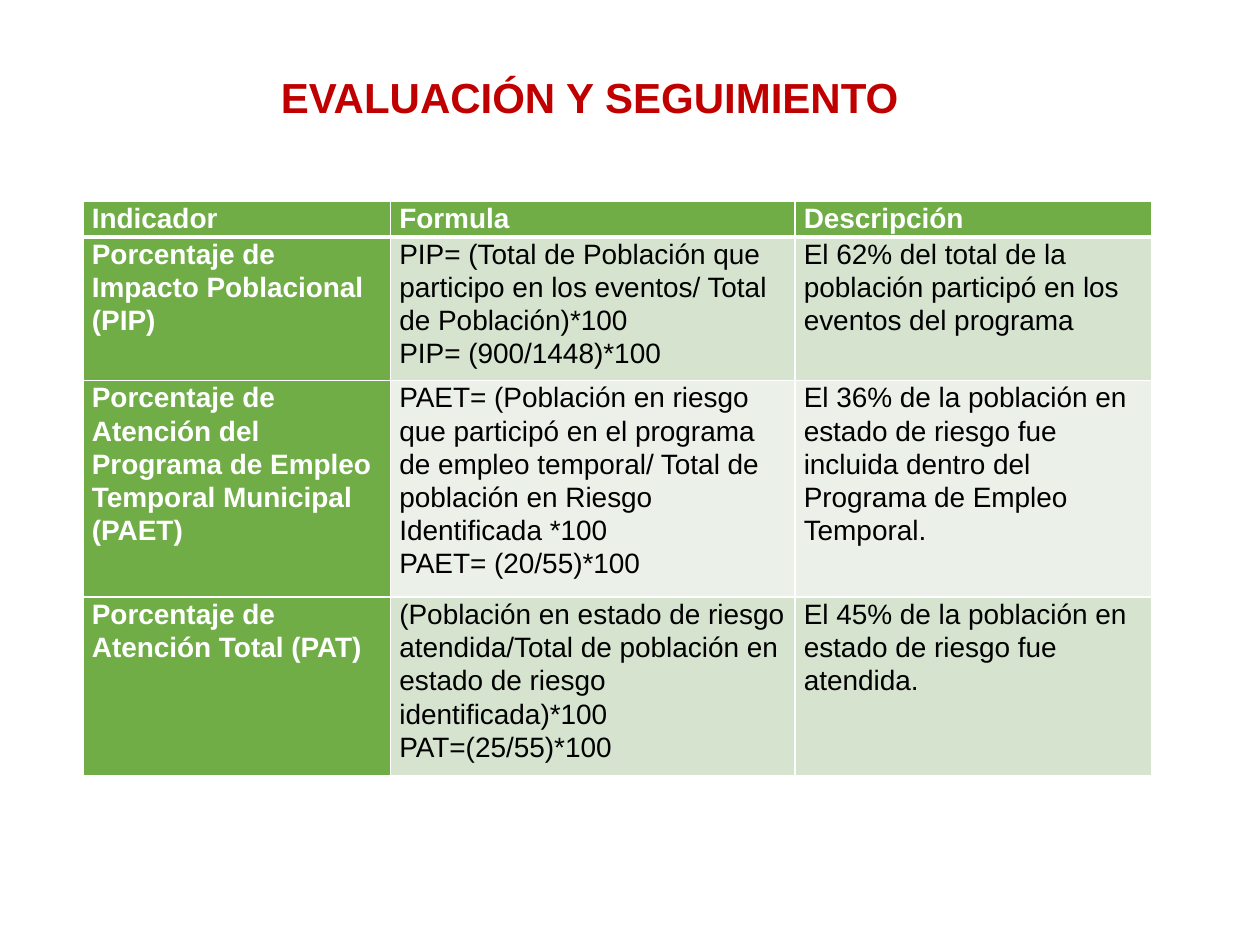
from lxml import etree
from pptx import Presentation
from pptx.dml.color import RGBColor
from pptx.enum import text
from pptx.oxml import ns
from pptx.util import Inches, Pt

COLORS = {"title": "C00000", "green": "70AD47", "band_dark": "D5E3CF",
          "band_light": "EBF1E9", "white": "FFFFFF", "black": "000000"}
ROWS = [
    ("Indicador", "Formula", "Descripción"),
    ("Porcentaje de Impacto Poblacional (PIP)",
     "PIP= (Total de Población que participo en los eventos/ Total de Población)*100\n"
     "PIP= (900/1448)*100",
     "El 62% del total de la población participó en los eventos del programa"),
    ("Porcentaje de Atención del Programa de Empleo Temporal Municipal (PAET)",
     "PAET= (Población en riesgo que participó en el programa de empleo temporal/ "
     "Total de población en Riesgo Identificada *100\nPAET= (20/55)*100",
     "El 36% de la población en estado de riesgo fue incluida dentro del "
     "Programa de Empleo Temporal."),
    ("Porcentaje de Atención Total (PAT)",
     "(Población en estado de riesgo atendida/Total de población en estado de "
     "riesgo identificada)*100\nPAT=(25/55)*100",
     "El 45% de la población en estado de riesgo fue atendida."),
]
COL_WIDTHS = [2.44, 3.21, 2.83]
ROW_HEIGHTS = [0.28, 1.14, 1.72, 1.42]


def style_font(p, size, color, bold):
    for r in p.runs:
        r.font.name = "Arial"
        r.font.size = Pt(size)
        r.font.bold = bold
        r.font.color.rgb = RGBColor.from_string(COLORS[color])


def set_borders(cell, widths):
    """Draw white cell borders; widths maps an edge letter to points."""
    tc_pr = cell._tc.get_or_add_tcPr()
    for i, (edge, width) in enumerate(widths.items()):
        ln = etree.Element(ns.qn(f"a:ln{edge}"), w=str(Pt(width)))
        fill = etree.SubElement(ln, ns.qn("a:solidFill"))
        etree.SubElement(fill, ns.qn("a:srgbClr"), val=COLORS["white"])
        tc_pr.insert(i, ln)


prs = Presentation()
prs.slide_width, prs.slide_height = Inches(10), Inches(7.5)
s = prs.slides.add_slide(prs.slide_layouts[5])

title = s.shapes.title
title.left, title.top = Inches(1.38), Inches(0.52)
title.width, title.height = Inches(6.6), Inches(0.81)
tf = title.text_frame
tf.text = "EVALUACIÓN Y SEGUIMIENTO"
tf.word_wrap = True
tf.auto_size = text.MSO_AUTO_SIZE.NONE
tf.vertical_anchor = text.MSO_ANCHOR.TOP
tf.paragraphs[0].alignment = text.PP_ALIGN.CENTER
style_font(tf.paragraphs[0], 24, "title", True)

table = s.shapes.add_table(len(ROWS), len(COL_WIDTHS), Inches(0.66), Inches(1.6),
                           Inches(sum(COL_WIDTHS)), Inches(sum(ROW_HEIGHTS))).table
table.first_col = True
for col, width in zip(table.columns, COL_WIDTHS):
    col.width = Inches(width)
for row, height in zip(table.rows, ROW_HEIGHTS):
    row.height = Inches(height)

for i, row in enumerate(ROWS):
    for j, content in enumerate(row):
        cell = table.cell(i, j)
        heading = i == 0 or j == 0
        band = "band_dark" if i % 2 else "band_light"
        cell.fill.solid()
        cell.fill.fore_color.rgb = RGBColor.from_string(COLORS["green" if heading else band])
        cell.margin_left = cell.margin_right = Inches(0.07)
        cell.margin_top = cell.margin_bottom = 0
        set_borders(cell, {"L": 1, "R": 1, "T": 3 if i == 1 else 1, "B": 3 if i == 0 else 1})
        cell.text_frame.text = content
        for p in cell.text_frame.paragraphs:
            p.line_spacing = 1.07
            style_font(p, 16, "white" if heading else "black", heading)

prs.save("out.pptx")
